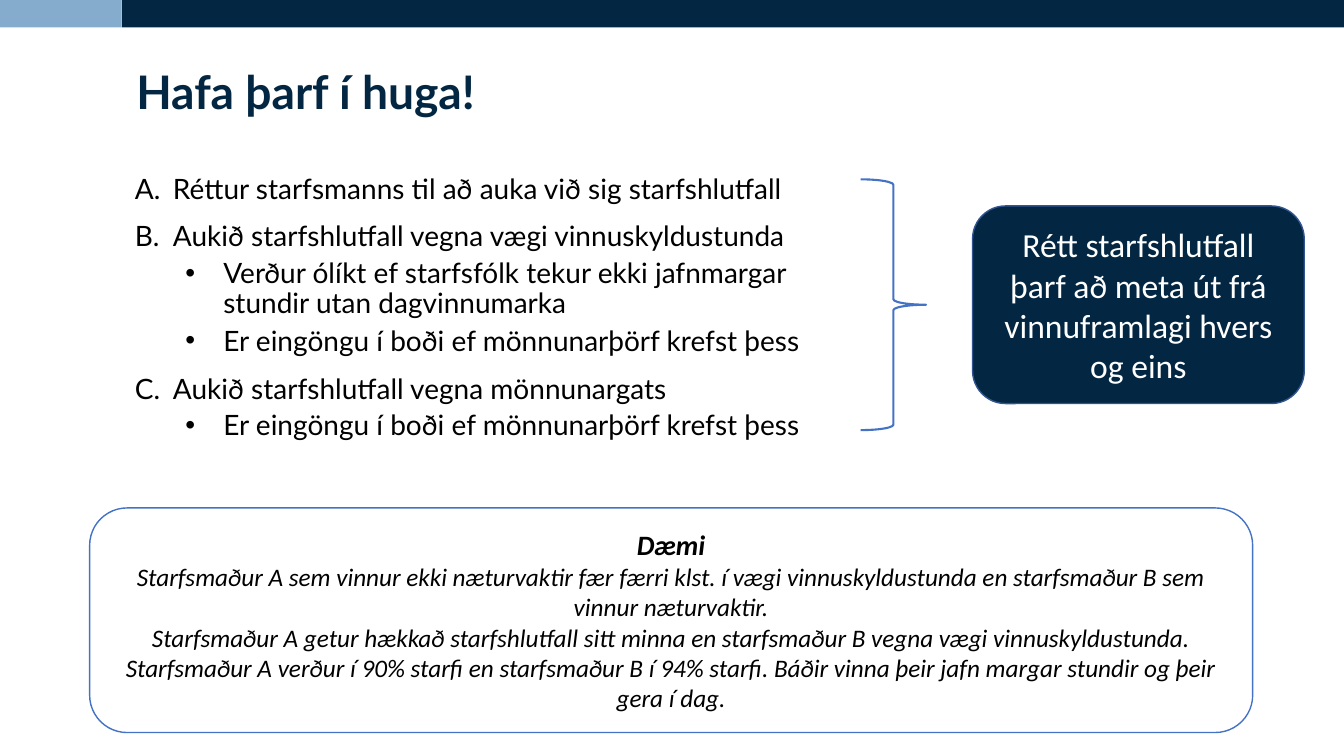
import pptx
import pptx.util
from dataclasses import dataclass
from pptx.dml.color import RGBColor
from pptx.enum.shapes import MSO_SHAPE
from pptx.enum.text import MSO_ANCHOR, PP_ALIGN
from pptx.oxml.ns import qn
from pptx.util import Cm, Pt
from lxml import etree


@dataclass(frozen=True)
class Theme:
    navy: str = "032742"
    sky: str = "85ABCD"
    blue: str = "4472C4"
    edge: str = "325491"
    white: str = "FFFFFF"
    black: str = "000000"
    heading_font: str = "Lato"
    body_font: str = "Calibri"
    title_size: int = 33
    callout_size: int = 24
    text_size: int = 20
    example_size: int = 18


THEME = Theme()
WIDTH, HEIGHT = 33.87, 19.05

TITLE = "Hafa þarf í huga!"
POINTS = [
    (0, "Réttur starfsmanns til að auka við sig starfshlutfall"),
    (0, "Aukið starfshlutfall vegna vægi vinnuskyldustunda"),
    (1, "Verður ólíkt ef starfsfólk tekur ekki jafnmargar stundir utan dagvinnumarka"),
    (1, "Er eingöngu í boði ef mönnunarþörf krefst þess"),
    (0, "Aukið starfshlutfall vegna mönnunargats"),
    (1, "Er eingöngu í boði ef mönnunarþörf krefst þess"),
]
CALLOUT = "Rétt starfshlutfall þarf að meta út frá vinnuframlagi hvers og eins"
EXAMPLE_HEAD = "Dæmi"
EXAMPLE = [
    "Starfsmaður A sem vinnur ekki næturvaktir fær færri klst. í vægi "
    "vinnuskyldustunda en starfsmaður B sem vinnur næturvaktir.",
    "Starfsmaður A getur hækkað starfshlutfall sitt minna en starfsmaður B vegna "
    "vægi vinnuskyldustunda. Starfsmaður A verður í 90% starfi en starfsmaður B "
    "í 94% starfi. Báðir vinna þeir jafn margar stundir og þeir gera í dag.",
]

# Marker tag, marker attributes, left indent (cm), paragraph format
LEVELS = [
    ("a:buAutoNum", {"type": "alphaUcPeriod"}, 0.96,
     {"line_spacing": Pt(24), "space_before": Pt(10)}),
    ("a:buChar", {"char": "•"}, 2.23,
     {"line_spacing": 0.9, "space_before": Pt(5)}),
]
HANGING = 0.96


def set_attrs(obj, values):
    for name, value in values.items():
        setattr(obj, name, value)


def add_run(p, text, color, **font):
    r = p.add_run()
    r.text = text
    set_attrs(r.font, font)
    r.font.color.rgb = RGBColor.from_string(color)


def paragraphs(tf, count):
    return [tf.paragraphs[0]] + [tf.add_paragraph() for _ in range(count - 1)]


def add_marker(p, level):
    tag, attrs, indent, spacing = LEVELS[level]
    p.level = level
    pPr = p._p.get_or_add_pPr()
    pPr.set("marL", str(Cm(indent)))
    pPr.set("indent", str(-Cm(HANGING)))
    font = etree.SubElement(pPr, qn("a:buFont"))
    font.set("typeface", "Arial" if level else "+mj-lt")
    etree.SubElement(pPr, qn(tag), attrs)
    set_attrs(p, spacing)


def add_panel(s, kind, box, fill=None, line=None, width=1):
    sp = s.shapes.add_shape(kind, *map(Cm, box))
    sp.shadow.inherit = False
    if fill:
        sp.fill.solid()
        sp.fill.fore_color.rgb = RGBColor.from_string(fill)
    else:
        sp.fill.background()
    if line:
        sp.line.color.rgb = RGBColor.from_string(line)
        sp.line.width = Pt(width)
    else:
        sp.line.fill.background()
    set_attrs(sp.text_frame, {"word_wrap": True, "vertical_anchor": MSO_ANCHOR.MIDDLE})
    return sp


def add_top_band(s, box):
    left, top, width, height = box
    accent = 3.07
    add_panel(s, MSO_SHAPE.RECTANGLE, (left + accent, top, width - accent, height), THEME.navy)
    add_panel(s, MSO_SHAPE.RECTANGLE, (left, top, accent, height), THEME.sky)


def add_title(s, box):
    sp = s.shapes.title
    set_attrs(sp, dict(zip(("left", "top", "width", "height"), map(Cm, box))))
    tf = sp.text_frame
    set_attrs(tf, {"word_wrap": True, "vertical_anchor": MSO_ANCHOR.TOP})
    p = tf.paragraphs[0]
    set_attrs(p, {"alignment": PP_ALIGN.LEFT, "line_spacing": 0.9, "space_before": Pt(0)})
    add_run(p, TITLE, THEME.navy, name=THEME.heading_font,
            size=Pt(THEME.title_size), bold=True)


def add_points(s, box):
    tf = s.shapes.add_textbox(*map(Cm, box)).text_frame
    tf.word_wrap = True
    for p, (level, text) in zip(paragraphs(tf, len(POINTS)), POINTS):
        add_marker(p, level)
        add_run(p, text, THEME.black, name=THEME.heading_font, size=Pt(THEME.text_size))
    tf.paragraphs[0].space_before = Pt(0)


def add_conclusion(s, box):
    """Brace at the left of the box, callout at its right, centred on each other."""
    left, top, width, height = box
    brace_width, callout_width, callout_height = 1.65, 8.36, 4.98
    add_panel(s, MSO_SHAPE.RIGHT_BRACE, (left, top, brace_width, height),
              line=THEME.blue, width=1.5)
    sp = add_panel(s, MSO_SHAPE.ROUNDED_RECTANGLE,
                   (left + width - callout_width, top + (height - callout_height) / 2,
                    callout_width, callout_height), THEME.navy, THEME.edge)
    p = sp.text_frame.paragraphs[0]
    p.alignment = PP_ALIGN.CENTER
    add_run(p, CALLOUT, THEME.white, name=THEME.body_font, size=Pt(THEME.callout_size))


def add_example(s, box):
    sp = add_panel(s, MSO_SHAPE.ROUNDED_RECTANGLE, box, THEME.white, THEME.blue)
    lines = [EXAMPLE_HEAD] + EXAMPLE
    for i, p in enumerate(paragraphs(sp.text_frame, len(lines))):
        p.alignment = PP_ALIGN.CENTER
        size = THEME.example_size if i else THEME.text_size
        add_run(p, lines[i], THEME.black, name=THEME.body_font, size=Pt(size),
                bold=i == 0, italic=True)


def main():
    prs = pptx.Presentation()
    set_attrs(prs, {"slide_width": Cm(WIDTH), "slide_height": Cm(HEIGHT)})
    s = prs.slides.add_slide(prs.slide_layouts.get_by_name("Title Only"))
    add_top_band(s, (0, 0, WIDTH, 0.69))
    add_title(s, (3.18, 1.63, 27.51, 2.18))
    add_points(s, (3.15, 4.19, 17.81, 12.75))
    add_conclusion(s, (21.69, 4.52, 11.18, 6.32))
    add_example(s, (2.26, 12.8, 29.31, 5.66))
    prs.save("out.pptx")


if __name__ == "__main__":
    main()
